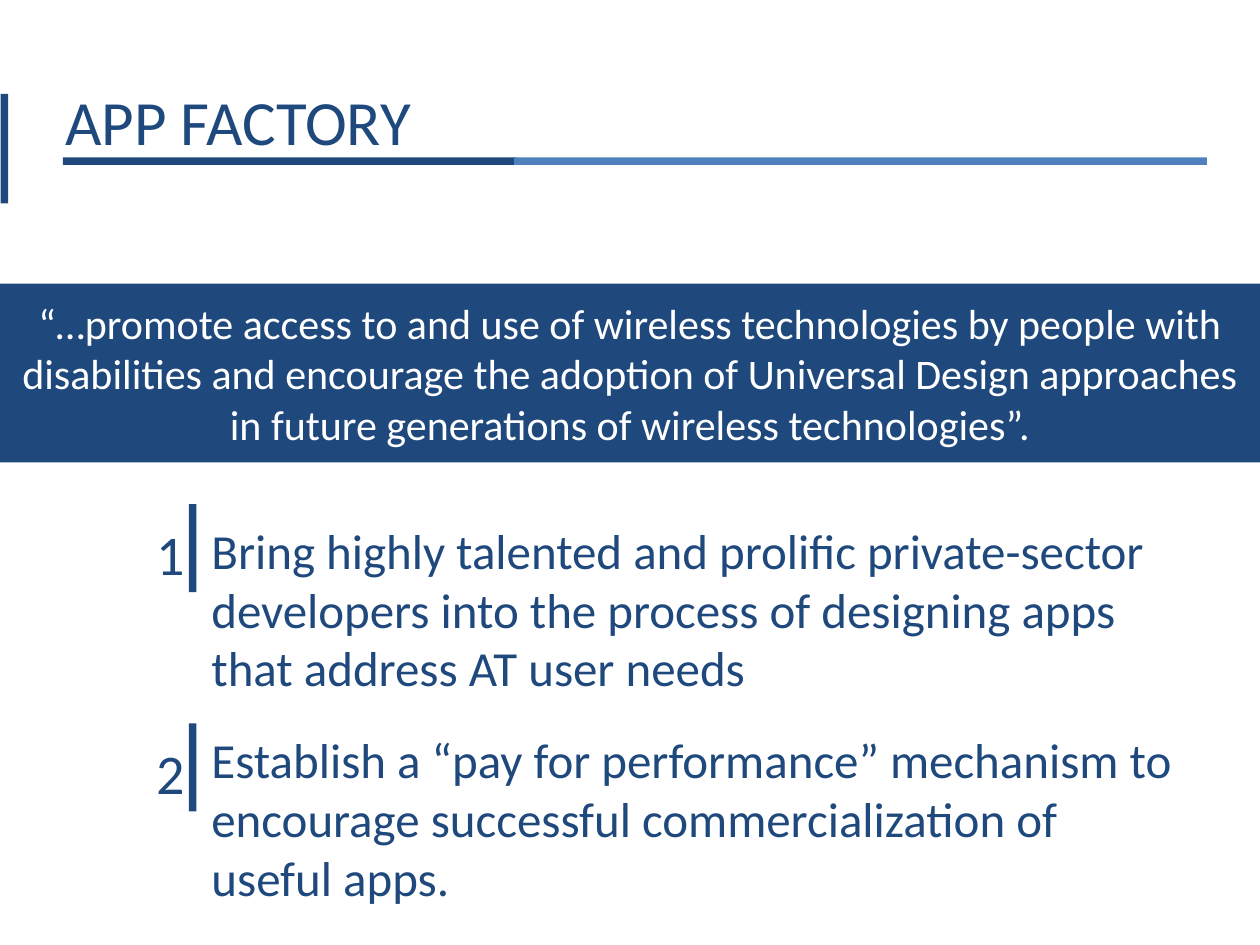
import pptx
import pptx.util
import pptx.dml.color
import pptx.enum.shapes
import pptx.enum.text

Inches = pptx.util.Inches
ANCHOR = pptx.enum.text.MSO_ANCHOR
ALIGN = pptx.enum.text.PP_ALIGN
FIT = pptx.enum.text.MSO_AUTO_SIZE
NAVY, BLUE, WHITE = "1F497D", "4F81BD", "FFFFFF"
THICK = 0.06

QUOTE = (
    "“…promote access to and use of wireless technologies by people with "
    "disabilities and encourage the adoption of Universal Design approaches "
    "in future generations of wireless technologies”."
)
GOALS = [
    ("Bring highly talented and prolific private-sector developers into the "
     "process of designing apps that address AT user needs", 0.08),
    ("Establish a “pay for performance” mechanism to encourage successful "
     "commercialization of useful apps.", 0),
]


def color(code):
    """Turn a hex string into a colour."""
    return pptx.dml.color.RGBColor.from_string(code)


def write(shape, text, size, tint=NAVY, align=ALIGN.LEFT,
          anchor=ANCHOR.TOP, pad=(0.1, 0.05)):
    """Set the text of a shape and format it."""
    frame = shape.text_frame
    frame.text = text
    frame.word_wrap = True
    frame.vertical_anchor = anchor
    frame.margin_left = frame.margin_right = Inches(pad[0])
    frame.margin_top = frame.margin_bottom = Inches(pad[1])
    para = frame.paragraphs[0]
    para.alignment = align
    font = para.runs[0].font
    font.name = "Calibri"
    font.size = pptx.util.Pt(size)
    font.color.rgb = color(tint)


def label(slide, box, text, size, **style):
    """Add a text box."""
    shape = slide.shapes.add_textbox(*map(Inches, box))
    write(shape, text, size, **style)
    return shape


def block(slide, box, fill=NAVY, turn=0):
    """Add a plain filled rectangle."""
    kind = pptx.enum.shapes.MSO_SHAPE.RECTANGLE
    shape = slide.shapes.add_shape(kind, *map(Inches, box))
    shape.shadow.inherit = False
    shape.fill.solid()
    shape.fill.fore_color.rgb = color(fill)
    shape.line.fill.background()
    shape.rotation = turn
    return shape


def header(slide, left, top, width, height):
    """Place the title, its two-tone rule and the edge mark."""
    label(slide, (left, top, width, height), "APP FACTORY", 36,
          anchor=ANCHOR.MIDDLE)
    rule = top + 0.92
    block(slide, (left + 0.08, rule, 3.6, THICK))
    block(slide, (left + 3.66, rule, 5.5, THICK), BLUE)
    block(slide, (left - 0.82, rule - 0.1, 0.87, THICK), turn=270)


def banner(slide, left, top, width, height):
    """Place the quote band."""
    band = block(slide, (left, top, width, height))
    write(band, QUOTE, 24, WHITE, ALIGN.CENTER, ANCHOR.MIDDLE)


def goal(slide, left, top, width, height, number, text, drop):
    """Place one numbered goal with its upright bar."""
    block(slide, (left + 0.18, top + 0.32, 0.7, THICK), turn=270)
    mark = label(slide, (left, top, 0.58, 0.78), str(number), 32,
                 align=ALIGN.CENTER, anchor=ANCHOR.MIDDLE, pad=(0.24, 0.12))
    body = label(slide, (left + 0.58, top + drop, width - 0.58, height),
                 text, 28)
    for shape in (mark, body):
        shape.text_frame.auto_size = FIT.SHAPE_TO_FIT_TEXT


def main():
    """Build and save the slide."""
    deck = pptx.Presentation()
    deck.slide_width, deck.slide_height = Inches(10), Inches(7.5)
    slide = deck.slides.add_slide(deck.slide_layouts[6])
    header(slide, 0.42, 0.33, 9, 1.25)
    for row, (text, drop) in enumerate(GOALS):
        goal(slide, 1, 4 + 1.74 * row, 8.41, 1.51, row + 1, text, drop)
    banner(slide, 0, 2.25, 10, 1.42)
    deck.save("out.pptx")


if __name__ == "__main__":
    main()
